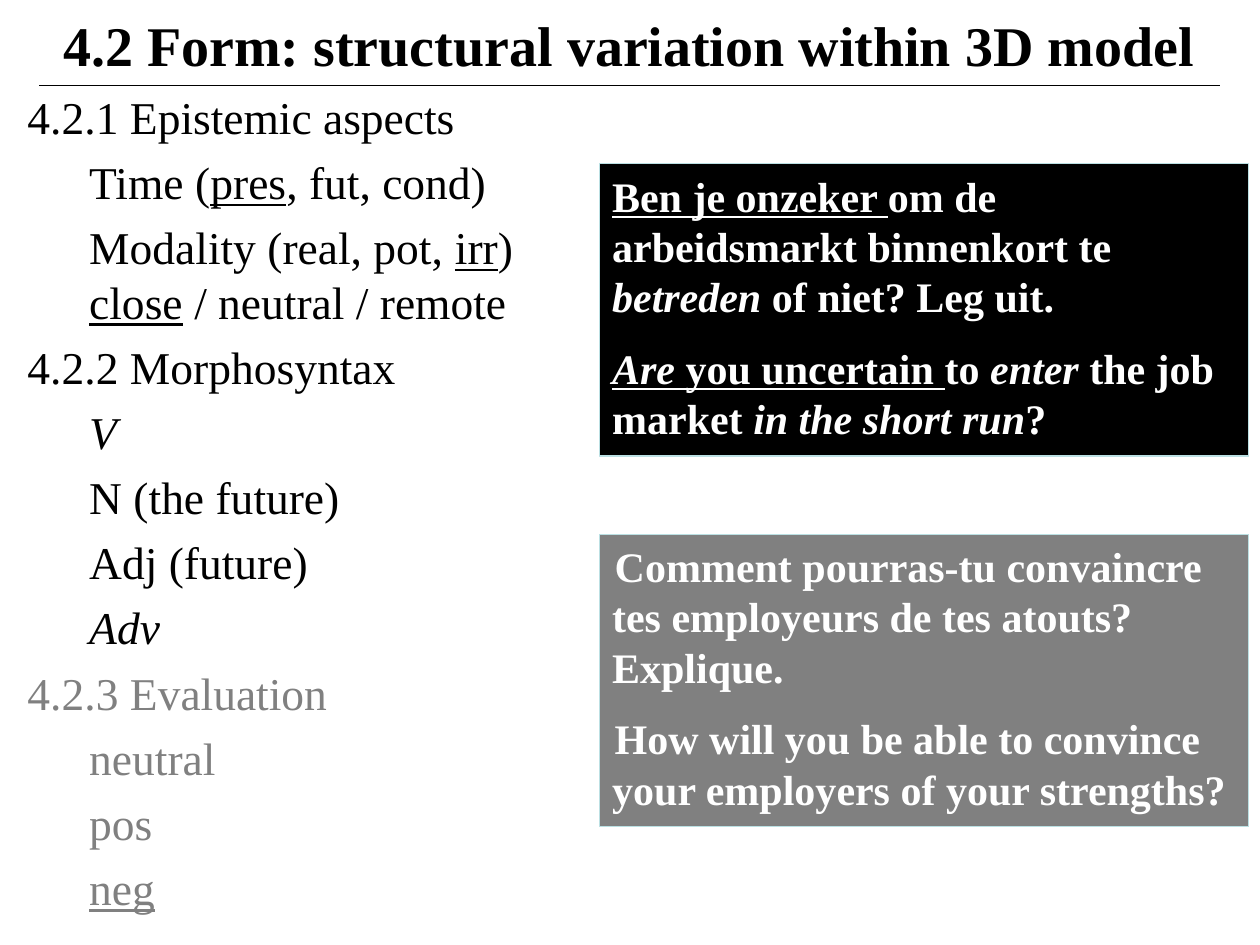
from pptx import Presentation
from pptx.dml.color import RGBColor
from pptx.enum.shapes import MSO_CONNECTOR, MSO_SHAPE
from pptx.enum.text import MSO_ANCHOR, PP_ALIGN
from pptx.oxml.ns import qn
from pptx.util import Inches, Pt
from lxml.etree import SubElement

BLACK = RGBColor(0, 0, 0)
GRAY = RGBColor(0x80, 0x80, 0x80)
WHITE = RGBColor(255, 255, 255)
PALE_TEAL = RGBColor(0xBB, 0xE0, 0xE3)
FONT = "Times New Roman"

TITLE = "4.2 Form: structural variation within 3D model"
OUTLINE = [
    (BLACK, [("4.2.1 Epistemic aspects", "")]),
    (BLACK, [("\tTime (", ""), ("pres", "u"), (", fut, cond)", "")]),
    (BLACK, [("\tModality (real, pot, ", ""), ("irr", "u"), (")", ""), ("\v", ""),
             ("close", "u"), (" / neutral / remote", "")]),
    (BLACK, [("4.2.2 Morphosyntax", "")]),
    (BLACK, [("\t", ""), ("V", "i")]),
    (BLACK, [("\tN (the future)", "")]),
    (BLACK, [("\tAdj (future)", "")]),
    (BLACK, [("\t", ""), ("Adv", "i")]),
    (GRAY, [("4.2.3 Evaluation", "")]),
    (GRAY, [("\tneutral", "")]),
    (GRAY, [("\tpos", "")]),
    (GRAY, [("\t", ""), ("neg", "u")]),
]
UNCERTAIN = [
    [("Ben je onzeker ", "u"), ("om de arbeidsmarkt binnenkort te ", ""),
     ("betreden", "i"), (" of niet? Leg uit.", "")],
    [("Are", "iu"), (" you uncertain ", "u"), ("to ", ""), ("enter ", "i"),
     ("the job market ", ""), ("in the short run", "i"), ("?", "")],
]
CONVINCE = [
    [("Comment pourras-tu convaincre tes employeurs de tes atouts? Explique.", "")],
    [("How will you be able to convince your employers of your strengths?", "")],
]


def set_font(paragraph, size, color, bold=False):
    """Give a whole paragraph one typeface, size, colour and weight."""
    font = paragraph.font
    font.name, font.size, font.bold = FONT, Pt(size), bold
    font.color.rgb = color


def add_runs(paragraph, parts):
    """Write (text, style) parts; style letters are i for italic, u for underline."""
    for text, style in parts:
        if text == "\v":
            paragraph.add_line_break()
            continue
        run = paragraph.add_run()
        run.text = text
        if "i" in style:
            run.font.italic = True
        if "u" in style:
            run.font.underline = True


def set_indent(paragraph, margin, first_line):
    """Set the left margin and first-line indent in inches."""
    properties = paragraph._p.get_or_add_pPr()
    properties.set("marL", str(Inches(margin)))
    properties.set("indent", str(Inches(first_line)))


def paragraphs_of(frame, count):
    """Yield the first paragraph of a frame and then new ones up to count."""
    yield frame.paragraphs[0]
    for _ in range(count - 1):
        yield frame.add_paragraph()


def place_title(slide, left, top, width, height):
    """Move the title into its box and draw the rule below it."""
    title = slide.shapes.title
    title.left, title.top, title.width, title.height = map(
        Inches, (left, top, width, height))
    frame = title.text_frame
    frame.text = TITLE
    frame.vertical_anchor = MSO_ANCHOR.TOP
    frame.word_wrap = True
    paragraph = frame.paragraphs[0]
    paragraph.alignment = PP_ALIGN.CENTER
    set_font(paragraph, 32, BLACK, bold=True)
    rule_top = Inches(top + height + 0.01)
    rule = slide.shapes.add_connector(
        MSO_CONNECTOR.STRAIGHT, Inches(left), rule_top, Inches(left + width), rule_top)
    rule.line.color.rgb = BLACK
    rule.line.width = Pt(0.75)
    SubElement(rule._element.spPr, qn("a:effectLst"))


def place_outline(slide, left, top, width, height):
    """Write the outline with hanging indents."""
    box = slide.shapes.add_textbox(*map(Inches, (left, top, width, height)))
    frame = box.text_frame
    frame.word_wrap = True
    for index, (paragraph, (color, parts)) in enumerate(
            zip(paragraphs_of(frame, len(OUTLINE)), OUTLINE)):
        set_indent(paragraph, 0.49, -0.49)
        paragraph.space_before = Pt(6 if index else 0)
        set_font(paragraph, 26, color)
        add_runs(paragraph, parts)


def place_example(slide, left, top, width, height, fill, examples, first_line=0):
    """Draw a filled panel with an example and its translation."""
    panel = slide.shapes.add_shape(
        MSO_SHAPE.RECTANGLE, *map(Inches, (left, top, width, height)))
    panel.shadow.inherit = False
    panel.fill.solid()
    panel.fill.fore_color.rgb = fill
    panel.line.color.rgb = PALE_TEAL
    panel.line.width = Pt(0.75)
    frame = panel.text_frame
    frame.word_wrap = True
    frame.vertical_anchor = MSO_ANCHOR.TOP
    for index, (paragraph, parts) in enumerate(
            zip(paragraphs_of(frame, len(examples)), examples)):
        paragraph.alignment = PP_ALIGN.LEFT
        set_indent(paragraph, 0, first_line)
        paragraph.space_before = Pt(12 if index else 0)
        set_font(paragraph, 24, WHITE, bold=True)
        add_runs(paragraph, parts)


def main():
    """Build the slide and save it."""
    presentation = Presentation()
    presentation.slide_width, presentation.slide_height = Inches(10), Inches(7.5)
    slide = presentation.slides.add_slide(presentation.slide_layouts[5])
    place_outline(slide, 0.12, 0.66, 4.33, 6.71)
    place_title(slide, 0.31, 0.03, 9.37, 0.64)
    place_example(slide, 4.76, 1.3, 5.15, 2.32, BLACK, UNCERTAIN)
    place_example(slide, 4.76, 4.24, 5.15, 2.32, GRAY, CONVINCE, first_line=0.02)
    presentation.save("out.pptx")


if __name__ == "__main__":
    main()
